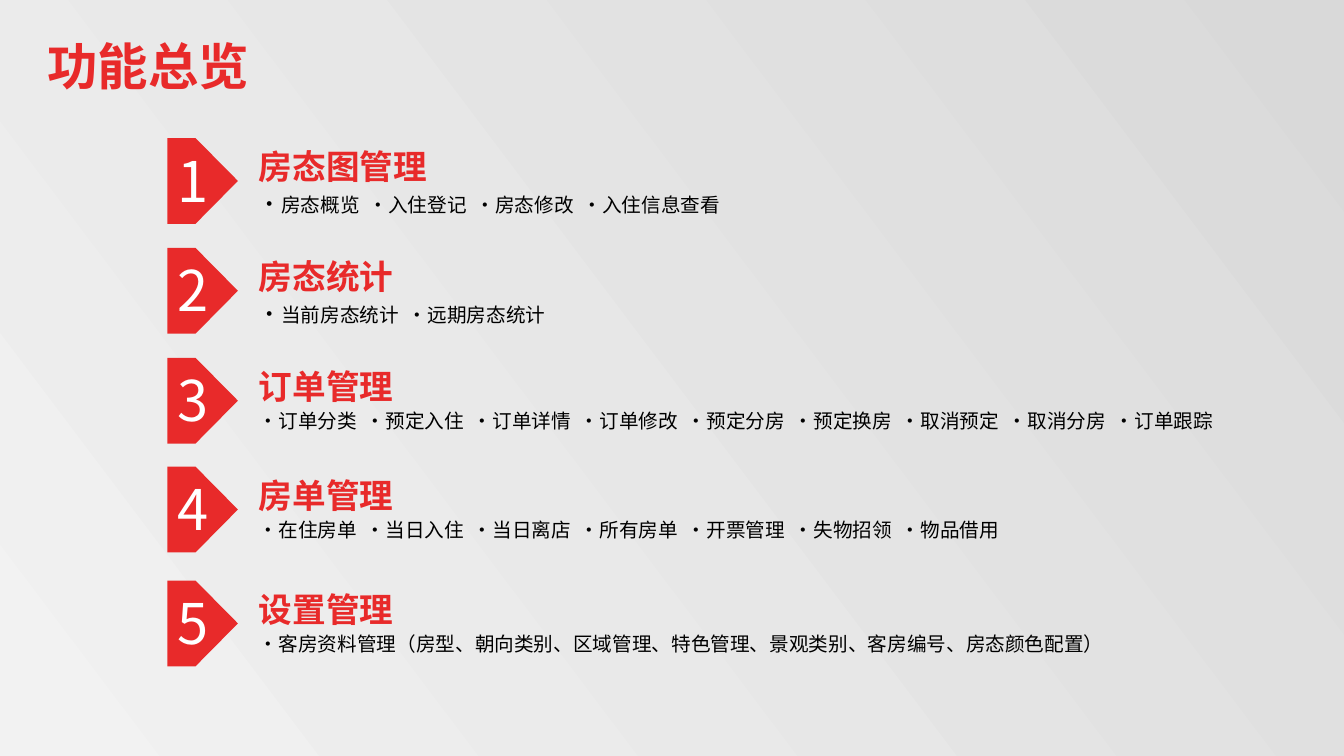
import lxml.etree
import pptx
import pptx.dml.color
import pptx.enum.shapes
import pptx.enum.text
import pptx.oxml.ns
import pptx.util

TITLE = "功能总览"
SECTIONS = [
    {"top": 1.40, "name": "房态图管理", "bullet": 16,
     "items": ["房态概览", "入住登记", "房态修改", "入住信息查看"]},
    {"top": 2.49, "name": "房态统计", "bullet": 16,
     "items": ["当前房态统计", "远期房态统计"]},
    {"top": 3.58, "name": "订单管理", "bullet": 14,
     "items": ["订单分类", "预定入住", "订单详情", "订单修改", "预定分房",
               "预定换房", "取消预定", "取消分房", "订单跟踪"]},
    {"top": 4.66, "name": "房单管理", "bullet": 14,
     "items": ["在住房单", "当日入住", "当日离店", "所有房单", "开票管理",
               "失物招领", "物品借用"]},
    {"top": 5.79, "name": "设置管理", "bullet": 14,
     "items": ["客房资料管理（房型、朝向类别、区域管理、特色管理、景观类别、"
               "客房编号、房态颜色配置）"]},
]
FONT = "Noto Sans CJK JP"
COLOURS = {"red": "E82A2A", "white": "FFFFFF", "black": "000000",
           "dark": "D9D9D9", "light": "F2F2F2"}
STYLES = {
    "title": {"size": 36, "bold": True, "colour": "red"},
    "heading": {"size": 24, "bold": True, "colour": "red"},
    "number": {"size": 40, "bold": False, "colour": "white"},
    "detail": {"size": 14, "bold": False, "colour": "black"},
}
SLIDE_WIDTH, SLIDE_HEIGHT = 13.33, 7.5
ARROW_LEFT, ARROW_WIDTH, ARROW_HEIGHT = 1.66, 0.70, 0.85
TEXT_LEFT = 2.47


def colour(name):
    return pptx.dml.color.RGBColor.from_string(COLOURS[name])


def inches(*lengths):
    return [pptx.util.Inches(length) for length in lengths]


def add_text(page, place, spans, style, align="LEFT"):
    box = page.shapes.add_textbox(*inches(*place))
    box.text_frame.word_wrap = True
    para = box.text_frame.paragraphs[0]
    para.alignment = getattr(pptx.enum.text.PP_ALIGN, align)
    look = STYLES[style]
    for text, size in spans:
        span = para.add_run()
        span.text = text
        values = {"name": FONT, "size": pptx.util.Pt(size), "bold": look["bold"]}
        for key, value in values.items():
            setattr(span.font, key, value)
        span.font.color.rgb = colour(look["colour"])
        east_asian = lxml.etree.SubElement(
            span.font._element, pptx.oxml.ns.qn("a:ea"))
        east_asian.set("typeface", FONT)


def add_arrow(page, top):
    arrow = page.shapes.add_shape(
        pptx.enum.shapes.MSO_SHAPE.PENTAGON,
        *inches(ARROW_LEFT, top, ARROW_WIDTH, ARROW_HEIGHT))
    arrow.adjustments[0] = 0.6
    arrow.shadow.inherit = False
    arrow.fill.solid()
    arrow.fill.fore_color.rgb = colour("red")
    arrow.line.fill.background()


def add_section(page, number, section):
    top = section["top"]
    bullet = section["bullet"]
    detail = "  •".join(section["items"])
    detail_top = top + (0.44 if bullet > 14 else 0.43)
    add_text(page, (TEXT_LEFT, detail_top, 10.38, 0.37),
             [("•", bullet), (detail, STYLES["detail"]["size"])],
             "detail", "JUSTIFY")
    add_text(page, (TEXT_LEFT, top, 2.65, 0.5),
             [(section["name"], STYLES["heading"]["size"])], "heading")
    add_arrow(page, top - 0.03)
    add_text(page, (ARROW_LEFT, top, 0.54, 0.77),
             [(str(number), STYLES["number"]["size"])], "number")


def main():
    deck = pptx.Presentation()
    deck.slide_width, deck.slide_height = inches(SLIDE_WIDTH, SLIDE_HEIGHT)
    page = deck.slides.add_slide(deck.slide_layouts[6])
    backdrop = page.background.fill
    backdrop.gradient()
    backdrop.gradient_angle = 217
    for stop, name, position in zip(
            backdrop.gradient_stops, ("dark", "light"), (0, 1)):
        stop.color.rgb = colour(name)
        stop.position = position
    add_text(page, (0.37, 0.3, 2.4, 0.71),
             [(TITLE, STYLES["title"]["size"])], "title")
    for number, section in enumerate(SECTIONS, 1):
        add_section(page, number, section)
    deck.save("out.pptx")


if __name__ == "__main__":
    main()
